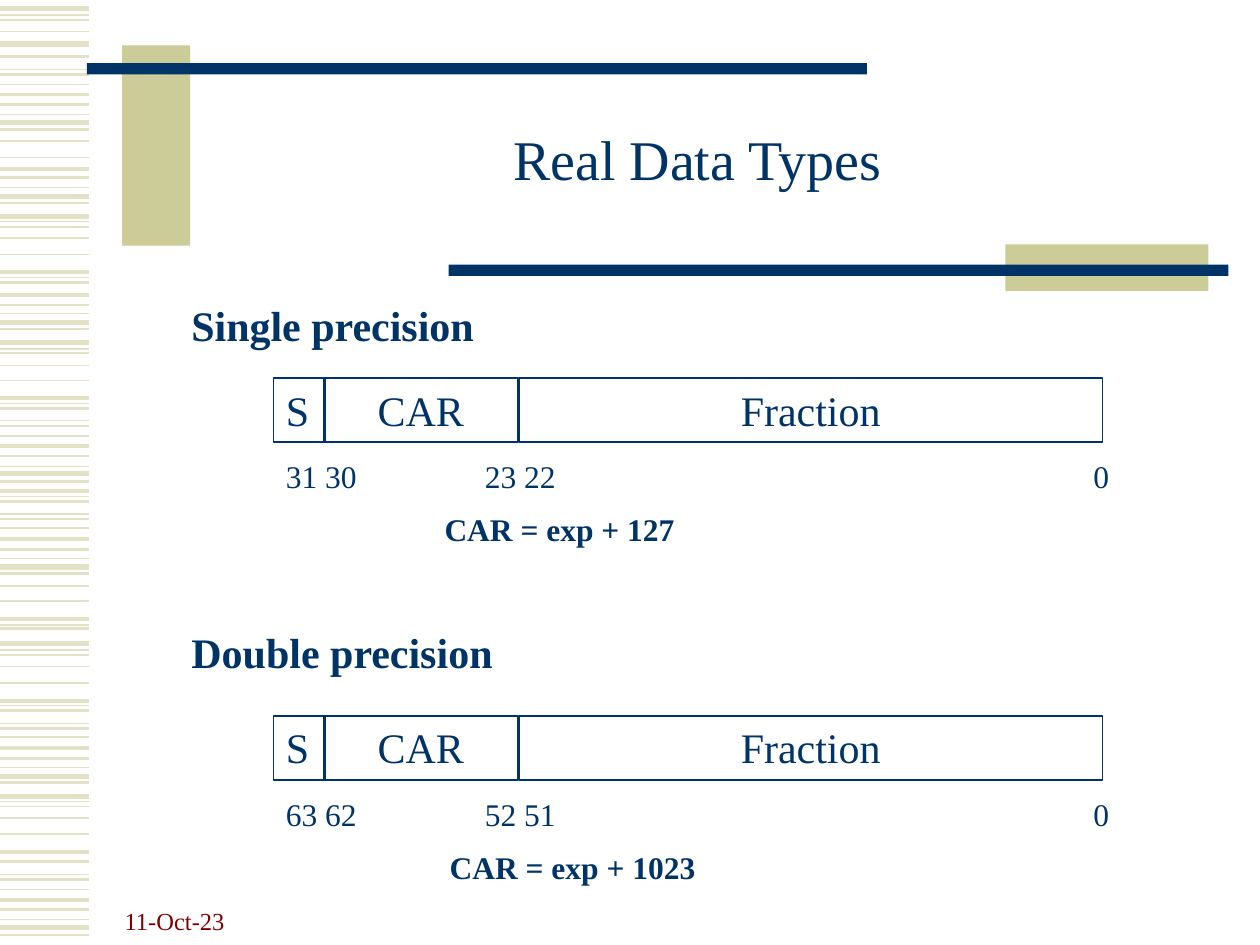
"""Build a slide on the bit layouts of single and double precision reals."""
from dataclasses import dataclass

from lxml import etree
from pptx import Presentation
from pptx import util as u
from pptx.dml.color import RGBColor
from pptx.enum import shapes, text
from pptx.oxml.ns import qn

NAVY, KHAKI, PALE, MAROON = "003366", "CCCC99", "E3E2C7", "800000"
FONT = "Times New Roman"
STRIPES = {
    3: (0.07, 0.35, 0.97, 1.56, 1.72, 2.56, 2.72, 3.76, 4.5, 5.11, 6.16, 6.32, 7.36),
    2.25: (0.75, 1.34, 2.16, 2.34, 3.16, 3.54, 3.9, 4.28, 4.91, 5.56, 5.94, 6.76, 7.14),
    1.5: (0.45, 0.59, 0.83, 1.03, 1.41, 1.61, 2.24, 2.42, 2.61, 3.24, 3.38, 3.62, 3.82,
          3.98, 4.12, 4.36, 4.55, 4.99, 5.64, 5.78, 6.02, 6.21, 6.84, 6.98, 7.22, 7.42),
    1: (0.16, 0.25, 0.67, 1.12, 1.25, 1.8, 1.89, 2.02, 2.8, 2.9, 3.02, 3.46,
        4.19, 4.65, 4.77, 5.2, 5.29, 5.42, 5.85, 6.4, 6.49, 6.62, 7.06),
    0.75: (0.12, 0.55, 0.91, 1.49, 1.76, 2.2, 2.49, 2.77, 3.2, 3.34, 3.7,
           3.94, 4.08, 4.43, 4.96, 5.16, 5.6, 5.74, 6.09, 6.36, 6.94, 7.3),
}


@dataclass(frozen=True)
class Box:
    """Position and size in inches."""
    left: float
    top: float
    width: float
    height: float

    def lengths(self) -> tuple:
        """Return the four lengths as Inches."""
        return tuple(map(u.Inches, (self.left, self.top, self.width, self.height)))


@dataclass(frozen=True)
class Style:
    """Look of a piece of text."""
    size: float
    color: str = NAVY
    bold: bool = False
    align: text.PP_ALIGN = text.PP_ALIGN.LEFT
    anchor: text.MSO_ANCHOR = text.MSO_ANCHOR.TOP
    wrap: bool = True
    spacing: float = 1.0


@dataclass(frozen=True)
class Precision:
    """One number format with its heading, bit numbers and bias note."""
    heading: str
    heading_box: Box
    top: float
    bits: tuple[str, ...]
    note: str
    note_box: Box
    note_wrap: bool


BAR_FIELDS = (
    ("S", 2.17, 0.41, text.PP_ALIGN.LEFT),
    ("CAR", 2.57, 1.54, text.PP_ALIGN.CENTER),
    ("Fraction", 4.12, 4.63, text.PP_ALIGN.CENTER),
)
BIT_LEFTS = (2.17, 3.75, 8.58)
PRECISIONS = (
    Precision("Single precision", Box(1.42, 2.33, 2.47, 0.51), 3, ("31 30", "23 22", "0"),
              "CAR = exp + 127", Box(3.43, 4, 2.03, 0.4), False),
    Precision("Double precision", Box(1.42, 4.92, 2.62, 0.5), 5.68, ("63 62", "52 51", "0"),
              "CAR = exp + 1023", Box(3.47, 6.68, 2.36, 0.4), True),
)


def rgb(color: str) -> RGBColor:
    """Turn a hex string into a colour."""
    return RGBColor.from_string(color)


def write(frame, words: str, style: Style) -> None:
    """Put one styled run into a text frame."""
    frame.word_wrap = style.wrap
    frame.vertical_anchor = style.anchor
    paragraph = frame.paragraphs[0]
    paragraph.alignment = style.align
    paragraph.line_spacing = style.spacing
    run = paragraph.add_run()
    run.text = words
    run.font.name = FONT
    run.font.size = u.Pt(style.size)
    run.font.bold = style.bold
    run.font.color.rgb = rgb(style.color)


def add_label(slide, words: str, box: Box, style: Style) -> None:
    """Add a text box."""
    write(slide.shapes.add_textbox(*box.lengths()).text_frame, words, style)


def add_rectangle(slide, box: Box, fill: str | None = None, outline: str | None = None):
    """Add a rectangle with a fill, an outline or both."""
    rectangle = slide.shapes.add_shape(shapes.MSO_SHAPE.RECTANGLE, *box.lengths())
    rectangle.shadow.inherit = False
    if fill:
        rectangle.fill.solid()
        rectangle.fill.fore_color.rgb = rgb(fill)
    else:
        rectangle.fill.background()
    if outline:
        rectangle.line.color.rgb = rgb(outline)
        rectangle.line.width = u.Pt(1)
    else:
        rectangle.line.fill.background()
    return rectangle


def add_stripe(slide, top: float, weight: float) -> None:
    """Add one line of the left margin pattern."""
    y = u.Inches(top)
    stripe = slide.shapes.add_connector(
        shapes.MSO_CONNECTOR.STRAIGHT, 0, y, u.Inches(0.71), y)
    stripe.line.color.rgb = rgb(PALE)
    stripe.line.width = u.Pt(weight)
    etree.SubElement(stripe._element.spPr, qn("a:effectLst"))


def add_precision(slide, precision: Precision) -> None:
    """Add the heading, bar, bit numbers and note of one format."""
    add_label(slide, precision.heading, precision.heading_box,
              Style(24, bold=True, wrap=False))
    for name, left, width, align in BAR_FIELDS:
        field = add_rectangle(slide, Box(left, precision.top, width, 0.51), outline=NAVY)
        write(field.text_frame, name, Style(24, align=align))
    for bits, left in zip(precision.bits, BIT_LEFTS):
        add_label(slide, bits, Box(left, precision.top + 0.58, 1, 0.4), Style(18))
    add_label(slide, precision.note, precision.note_box,
              Style(18, bold=True, wrap=precision.note_wrap))


def main() -> None:
    """Build and save the presentation."""
    deck = Presentation()
    deck.slide_width, deck.slide_height = u.Inches(10), u.Inches(7.5)
    slide = deck.slides.add_slide(deck.slide_layouts[6])
    for weight, tops in STRIPES.items():
        for top in tops:
            add_stripe(slide, top, weight)
    for block, rule in (
        (Box(0.97, 0.36, 0.54, 1.59), Box(0.69, 0.5, 6.19, 0.09)),
        (Box(7.98, 1.94, 1.61, 0.37), Box(3.56, 2.1, 6.19, 0.09)),
    ):
        add_rectangle(slide, block, fill=KHAKI)
        add_rectangle(slide, rule, fill=NAVY)
    add_label(slide, "11-Oct-23", Box(0.89, 6.97, 2.08, 0.5),
              Style(14, MAROON, anchor=text.MSO_ANCHOR.BOTTOM))
    add_label(slide, "Real Data Types", Box(1.5, 0.67, 8.07, 1.25),
              Style(32, align=text.PP_ALIGN.CENTER, anchor=text.MSO_ANCHOR.MIDDLE,
                    spacing=0.85))
    for precision in PRECISIONS:
        add_precision(slide, precision)
    deck.save("out.pptx")


if __name__ == "__main__":
    main()
